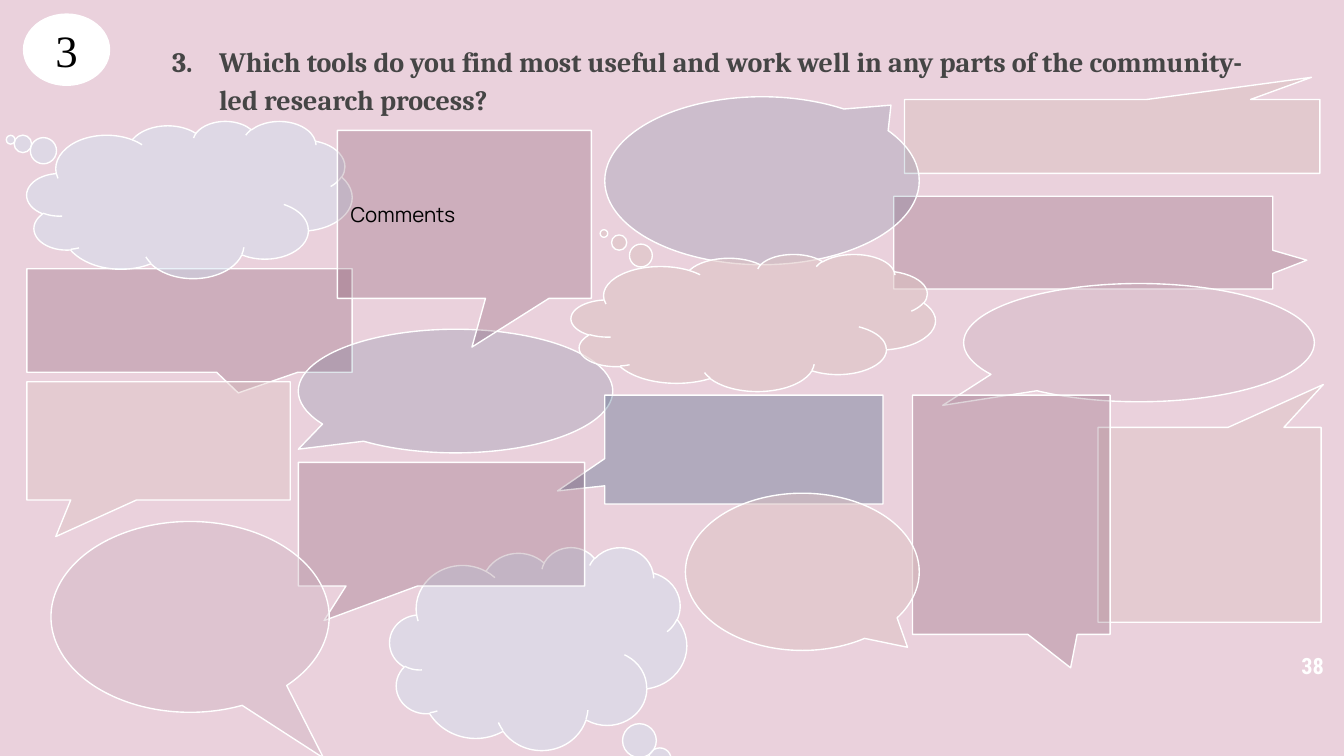
from lxml import etree
from pptx import Presentation
from pptx.dml.color import RGBColor
from pptx.enum import shapes, text
from pptx.oxml import ns
from pptx.util import Inches, Pt

COLORS = {
    "background": "EAD1DC", "heading": "454545", "white": "FFFFFF", "black": "000000",
    "sand": "DDC3C3", "wine": "4C1130", "navy": "073763", "sky": "CFE2F3", "mauve": "C8ACBA",
}
SHAPE = shapes.MSO_SHAPE
RECT, ROUND = SHAPE.RECTANGULAR_CALLOUT, SHAPE.ROUNDED_RECTANGULAR_CALLOUT
OVAL, CLOUD = SHAPE.OVAL_CALLOUT, SHAPE.CLOUD_CALLOUT

# kind, box (left, top, width, height), pointer tip, fill, opacity %, label
BUBBLES = [
    (RECT, (6.73, 0.74, 3.09, 0.55), (0.48, -0.8), "sand", 54, ""),
    (ROUND, (0.2, 2, 2.42, 0.77), (0.15, 0.7), "wine", 18, ""),
    (OVAL, (2.22, 2.45, 2.34, 0.92), (-0.5, 0.47), "navy", 13, ""),
    (CLOUD, (2.9, 4.07, 2.21, 1.51), (0.45, 0.6), "sky", 43, ""),
    (CLOUD, (0.2, 0.9, 2.42, 1.17), (-0.55, -0.38), "sky", 43, ""),
    (RECT, (0.2, 2.84, 1.96, 0.88), (-0.39, 0.81), "sand", 41, ""),
    (ROUND, (6.65, 1.46, 2.82, 0.69), (0.59, 0.19), "wine", 18, ""),
    (OVAL, (4.5, 0.72, 2.34, 1.25), (0.41, -0.45), "navy", 13, ""),
    (ROUND, (2.51, 0.97, 1.89, 1.25), (0.03, 0.79), "wine", 18, "Comments"),
    (CLOUD, (4.25, 1.89, 2.71, 1.02), (-0.41, -0.65), "sand", 54, ""),
    (RECT, (4.5, 2.94, 2.07, 0.81), (-0.67, 0.38), "navy", 25, ""),
    (OVAL, (7.17, 2.11, 2.61, 0.88), (-0.56, 0.53), "mauve", 35, ""),
    (ROUND, (8.17, 3.18, 1.66, 1.45), (0.51, -0.72), "sand", 41, ""),
    (RECT, (6.79, 2.94, 1.47, 1.78), (0.3, 0.64), "wine", 18, ""),
    (OVAL, (5.1, 3.67, 1.74, 1.17), (0.45, 0.48), "sand", 51, ""),
    (ROUND, (2.22, 3.44, 2.13, 0.92), (-0.41, 0.78), "wine", 18, ""),
    (OVAL, (0.38, 3.88, 2.07, 1.42), (0.48, 0.74), "mauve", 35, ""),
]


def rgb(name):
    return RGBColor.from_string(COLORS[name])


def inches(box):
    return [Inches(length) for length in box]


def write(shape, words, font, size, color, align=text.PP_ALIGN.LEFT, bold=False):
    """Put one formatted run in a shape and return its paragraph."""
    frame = shape.text_frame
    frame.word_wrap = True
    frame.auto_size = text.MSO_AUTO_SIZE.NONE
    frame.vertical_anchor = text.MSO_ANCHOR.MIDDLE
    frame.margin_left = frame.margin_right = Inches(0.1)
    frame.margin_top = frame.margin_bottom = Inches(0.1)
    paragraph = frame.paragraphs[0]
    paragraph.alignment = align
    run = paragraph.add_run()
    run.text = words
    run.font.name, run.font.size, run.font.bold = font, Pt(size), bold
    run.font.color.rgb = rgb(color)
    return paragraph


def add_filled(slide, kind, box, color):
    shape = slide.shapes.add_shape(kind, *inches(box))
    shape.shadow.inherit = False
    shape.fill.solid()
    shape.fill.fore_color.rgb = rgb(color)
    return shape


def add_question(slide, box):
    title = slide.shapes.title
    title.left, title.top, title.width, title.height = inches(box)
    paragraph = write(
        title,
        "Which tools do you find most useful and work well in any parts of the "
        "community-led research process?",
        "Cambria", 15, "heading", bold=True)
    paragraph.line_spacing = 1.15
    paragraph.space_before = Pt(0)
    # Numbering that starts at 3, with a hanging indent
    properties = paragraph._p.get_or_add_pPr()
    properties.set("marL", str(Inches(0.5)))
    properties.set("indent", str(Inches(-0.35)))
    bullet_color = etree.SubElement(properties, ns.qn("a:buClr"))
    etree.SubElement(bullet_color, ns.qn("a:srgbClr"), val=COLORS["heading"])
    etree.SubElement(properties, ns.qn("a:buFont"), typeface="Cambria")
    etree.SubElement(properties, ns.qn("a:buAutoNum"), type="arabicPeriod", startAt="3")


def add_page_number(slide, box):
    number = slide.shapes.add_textbox(*inches(box))
    write(number, "38", "Roboto Condensed", 12, "white", text.PP_ALIGN.RIGHT, bold=True)


def add_bubble(slide, kind, box, tip, color, opacity, label):
    bubble = add_filled(slide, kind, box, color)
    bubble.line.color.rgb = rgb("white")
    bubble.line.width = Pt(0.75)
    bubble.adjustments[0], bubble.adjustments[1] = tip
    if kind == ROUND:
        bubble.adjustments[2] = 0  # square corners
    fill_color = bubble._element.spPr.find(ns.qn("a:solidFill"))[0]
    etree.SubElement(fill_color, ns.qn("a:alpha"), val=str(opacity * 1000))
    if label:
        write(bubble, label, "Manrope", 11, "black")


def add_badge(slide, box):
    badge = add_filled(slide, SHAPE.OVAL, box, "white")
    badge.line.fill.background()
    write(badge, "3", "Times New Roman", 24, "black", text.PP_ALIGN.CENTER)


def main():
    presentation = Presentation()
    # Widescreen, 16:9
    presentation.slide_width = Inches(10)
    presentation.slide_height = Inches(10 * 9 / 16)
    slide = presentation.slides.add_slide(presentation.slide_layouts[5])
    slide.background.fill.solid()
    slide.background.fill.fore_color.rgb = rgb("background")

    # Heading and page number
    add_question(slide, (1.03, 0.3, 8.44, 0.56))
    add_page_number(slide, (8.32, 4.72, 1.63, 0.46))
    # Speech and thought bubbles, back to front
    for bubble in BUBBLES:
        add_bubble(slide, *bubble)
    # Question number badge
    add_badge(slide, (0.17, 0.1, 0.65, 0.54))

    presentation.save("out.pptx")


if __name__ == "__main__":
    main()
